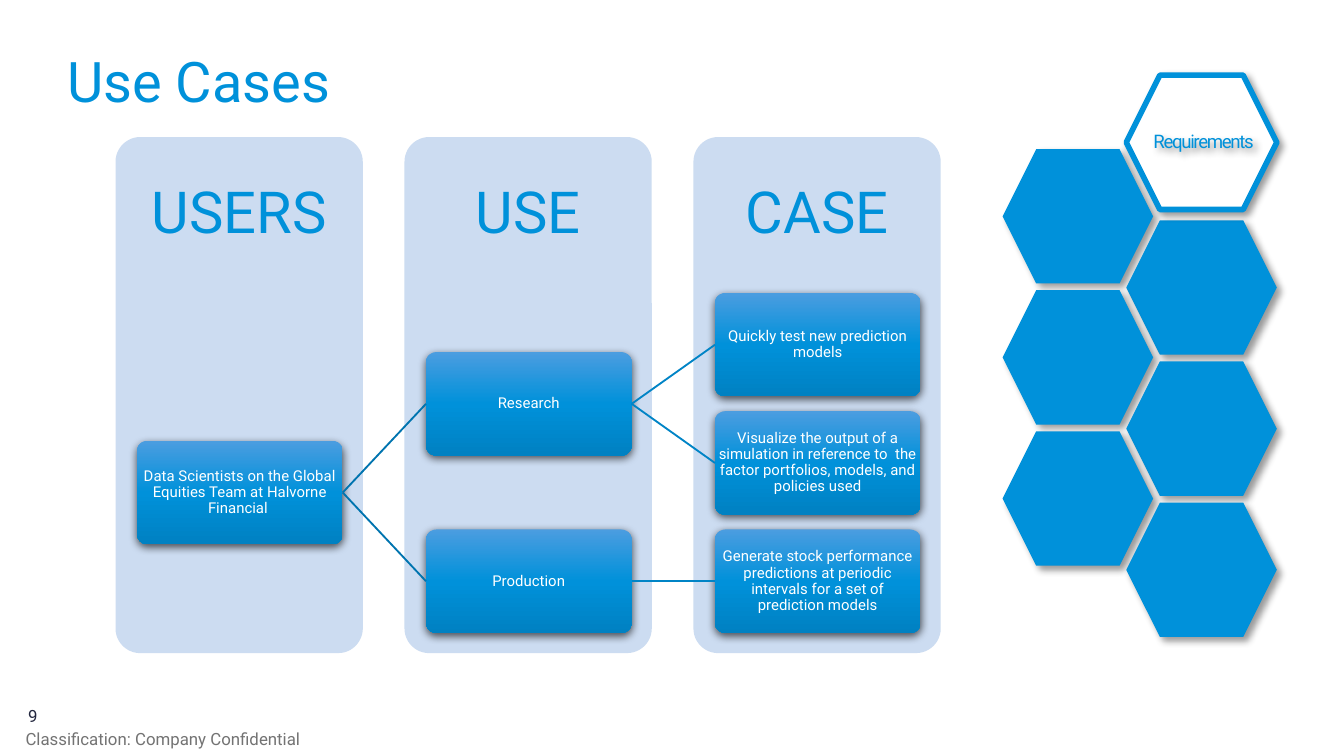
from lxml import etree
from pptx import Presentation
from pptx.dml.color import RGBColor
from pptx.enum.shapes import MSO_CONNECTOR, MSO_SHAPE as SHAPE
from pptx.enum.text import MSO_ANCHOR as ANCHOR, MSO_AUTO_SIZE, PP_ALIGN as ALIGN
from pptx.oxml.ns import qn
from pptx.util import Inches, Pt

BLUE, WHITE, PANEL = "0091DA", "FFFFFF", "CCDCF1"
GRADIENT = [(0, "4B9DE0"), (50, BLUE), (100, "0081C2")]
NODE_SHADOW = (63, 4.5, 1.5, 90)  # opacity %, blur pt, distance pt, angle
HEX_SHADOW = (40, 4, 3, 45)

COLUMN_STEP, COLUMN_W = 2.15, 1.84
NODE_W, NODE_H, ROW_STEP = 1.53, 0.77, 0.88
HEX_W, HEX_H, HEX_STEP = 1.12, 1, 1.05

HEADINGS = ["USERS", "USE", "CASE"]
# name: (column, row, text)
NODES = {
    "users": (0, 1.25, "Data Scientists on the Global Equities Team at Halvorne Financial "),
    "research": (1, 0.5, "Research"),
    "production": (1, 2, "Production"),
    "test": (2, 0, "Quickly test new prediction models"),
    "visualize": (2, 1, "Visualize the output of a simulation in reference to  the "
                        "factor portfolios, models, and policies used"),
    "generate": (2, 2, "Generate stock performance predictions at periodic "
                       "intervals for a set of prediction models"),
}
LINKS = [
    ("users", "research", "0074AF"),
    ("users", "production", "0074AF"),
    ("research", "test", "0084C6"),
    ("research", "visualize", "0084C6"),
    ("production", "generate", "0084C6"),
]


def rgb(value):
    return RGBColor.from_string(value)


def set_text(sp, text, size, color, align=ALIGN.LEFT, anchor=ANCHOR.MIDDLE,
             inset=0, spacing=None):
    tf = sp.text_frame
    tf.text = text
    tf.word_wrap = True
    tf.auto_size = MSO_AUTO_SIZE.NONE
    tf.vertical_anchor = anchor
    tf.margin_left = tf.margin_right = tf.margin_top = tf.margin_bottom = Inches(inset)
    p = tf.paragraphs[0]
    p.alignment = align
    p.line_spacing = spacing
    r = p.runs[0]
    r.font.name, r.font.size = "Roboto", Pt(size)
    r.font.color.rgb = rgb(color)
    return r


def add_text(slide, box, *args, **kwargs):
    sp = slide.shapes.add_textbox(*map(Inches, box))
    return sp, set_text(sp, *args, **kwargs)


def add_shape(slide, kind, box, fill):
    sp = slide.shapes.add_shape(kind, *map(Inches, box))
    sp.fill.solid()
    sp.fill.fore_color.rgb = rgb(fill)
    sp.line.fill.background()
    sp.shadow.inherit = False
    return sp


def add_color(parent, value):
    return etree.SubElement(parent, qn("a:srgbClr"), val=value)


def set_shadow(sp, opacity, blur, distance, angle):
    sp.shadow.inherit = False
    effects = sp._element.spPr.find(qn("a:effectLst"))
    outer = etree.SubElement(effects, qn("a:outerShdw"), blurRad=str(Pt(blur)),
                             dist=str(Pt(distance)), dir=str(angle * 60000),
                             algn="ctr", rotWithShape="0")
    etree.SubElement(add_color(outer, "000000"), qn("a:alpha"), val=str(opacity * 1000))


def set_gradient(sp, stops):
    sp.fill.gradient()
    sp.fill.gradient_angle = 270  # counter-clockwise: runs from top to bottom
    stop_list = sp._element.spPr.find(".//" + qn("a:gsLst"))
    for stop in list(stop_list):
        stop_list.remove(stop)
    for position, color in stops:
        add_color(etree.SubElement(stop_list, qn("a:gs"), pos=str(position * 1000)), color)


def add_column(slide, x, y, heading):
    panel = add_shape(slide, SHAPE.ROUNDED_RECTANGLE, (x, y, COLUMN_W, 3.84), PANEL)
    panel.adjustments[0] = 0.1
    add_text(slide, (x, y, COLUMN_W, 1.15), heading, 31, BLUE, ALIGN.CENTER,
             inset=0.24, spacing=0.9)


def add_node(slide, x, y, text):
    sp = add_shape(slide, SHAPE.ROUNDED_RECTANGLE, (x, y, NODE_W, NODE_H), BLUE)
    sp.adjustments[0] = 0.1
    set_gradient(sp, GRADIENT)
    set_shadow(sp, *NODE_SHADOW)
    set_text(sp, text, 8, WHITE, ALIGN.CENTER, spacing=0.9)
    return sp


def add_link(slide, start, end, color):
    line = slide.shapes.add_connector(MSO_CONNECTOR.STRAIGHT, 0, 0, 0, 0)
    line.begin_connect(start, 3)
    line.end_connect(end, 1)
    line.line.color.rgb = rgb(color)
    line.line.width = Pt(1)
    etree.SubElement(line._element.spPr, qn("a:effectLst"))


def add_tree(slide, x, y):
    for i, heading in enumerate(HEADINGS):
        add_column(slide, x + i * COLUMN_STEP, y, heading)
    nodes = {
        name: add_node(slide, x + 0.16 + column * COLUMN_STEP,
                       y + 1.16 + row * ROW_STEP, text)
        for name, (column, row, text) in NODES.items()
    }
    for start, end, color in LINKS:
        add_link(slide, nodes[start], nodes[end], color)


def add_hexagon(slide, x, y, fill=BLUE):
    sp = add_shape(slide, SHAPE.HEXAGON, (x, y, HEX_W, HEX_H), fill)
    set_shadow(sp, *HEX_SHADOW)
    return sp


def add_honeycomb(slide, x, y):
    right = x + 0.92
    for i in range(3):
        add_hexagon(slide, x, y + 0.55 + i * HEX_STEP)
        add_hexagon(slide, right, y + 1.08 + i * HEX_STEP)
    # Outlined label cell on top
    label = add_hexagon(slide, right, y, WHITE)
    label.line.color.rgb = rgb(BLUE)
    label.line.width = Pt(3)
    sp, r = add_text(slide, (right, y, 1.15, HEX_H), "Requirements", 10, BLUE,
                     ALIGN.CENTER, inset=0.05, spacing=0.9)
    r.font._element.set("spc", "-70")
    set_shadow(sp, *HEX_SHADOW)


def add_title(slide, box, text):
    title = slide.shapes.title
    title.left, title.top, title.width, title.height = map(Inches, box)
    set_text(title, text, 30, BLUE, anchor=ANCHOR.TOP, spacing=0.8)


def add_footer(slide, x, y):
    add_text(slide, (x + 0.02, y, 0.29, 0.3), "9", 9, "23273F", anchor=ANCHOR.BOTTOM)
    add_text(slide, (x, y + 0.26, 2.23, 0.27), "Classification: Company Confidential",
             9, "737373")


def main():
    prs = Presentation()
    prs.slide_width = Inches(10)
    prs.slide_height = prs.slide_width * 9 // 16
    slide = prs.slides.add_slide(prs.slide_layouts[5])
    add_title(slide, (0.5, 0.44, 9, 0.58), "Use Cases")
    add_tree(slide, 0.86, 1.02)
    add_honeycomb(slide, 7.46, 0.56)
    add_footer(slide, 0.19, 5.1)
    prs.save("out.pptx")


if __name__ == "__main__":
    main()
